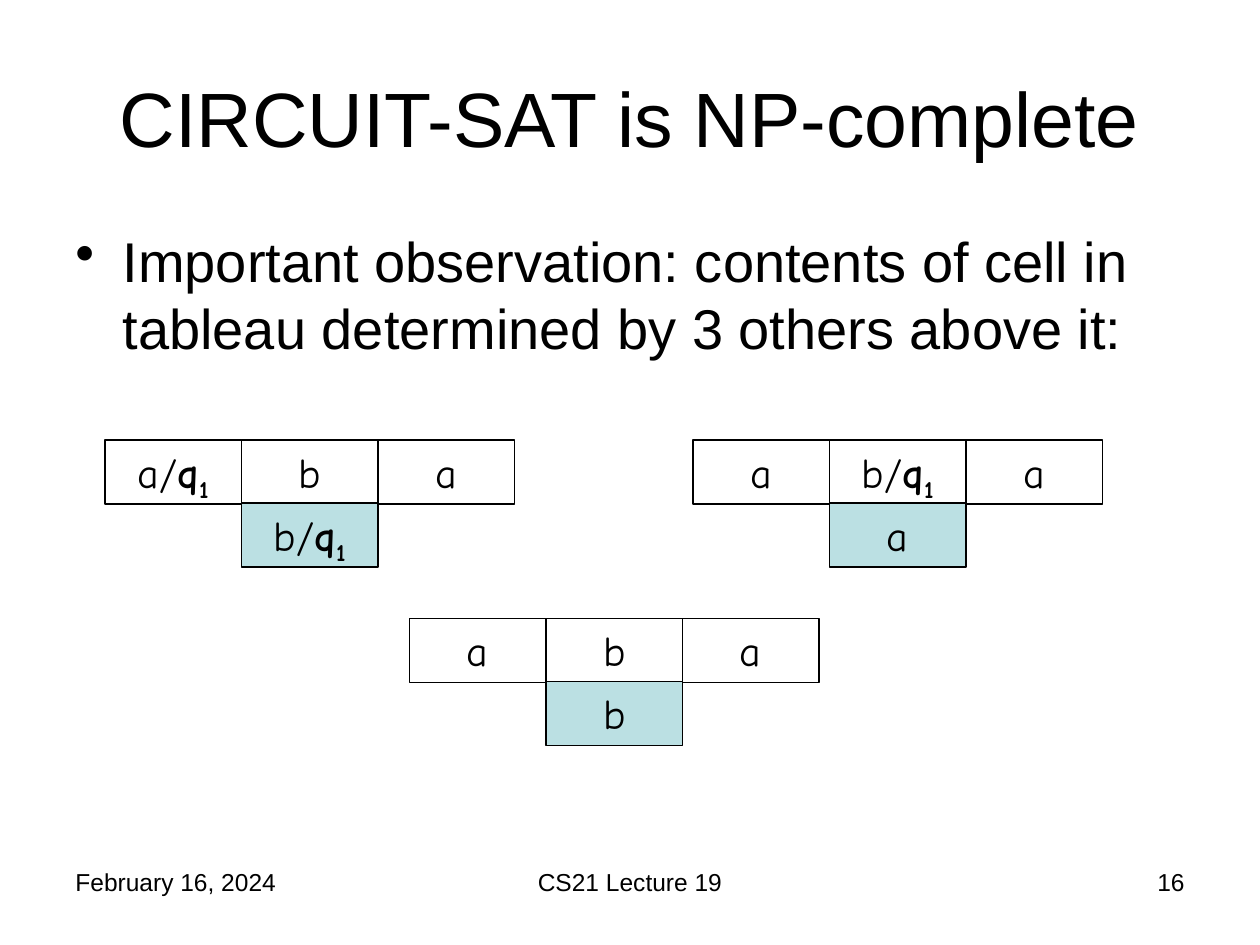
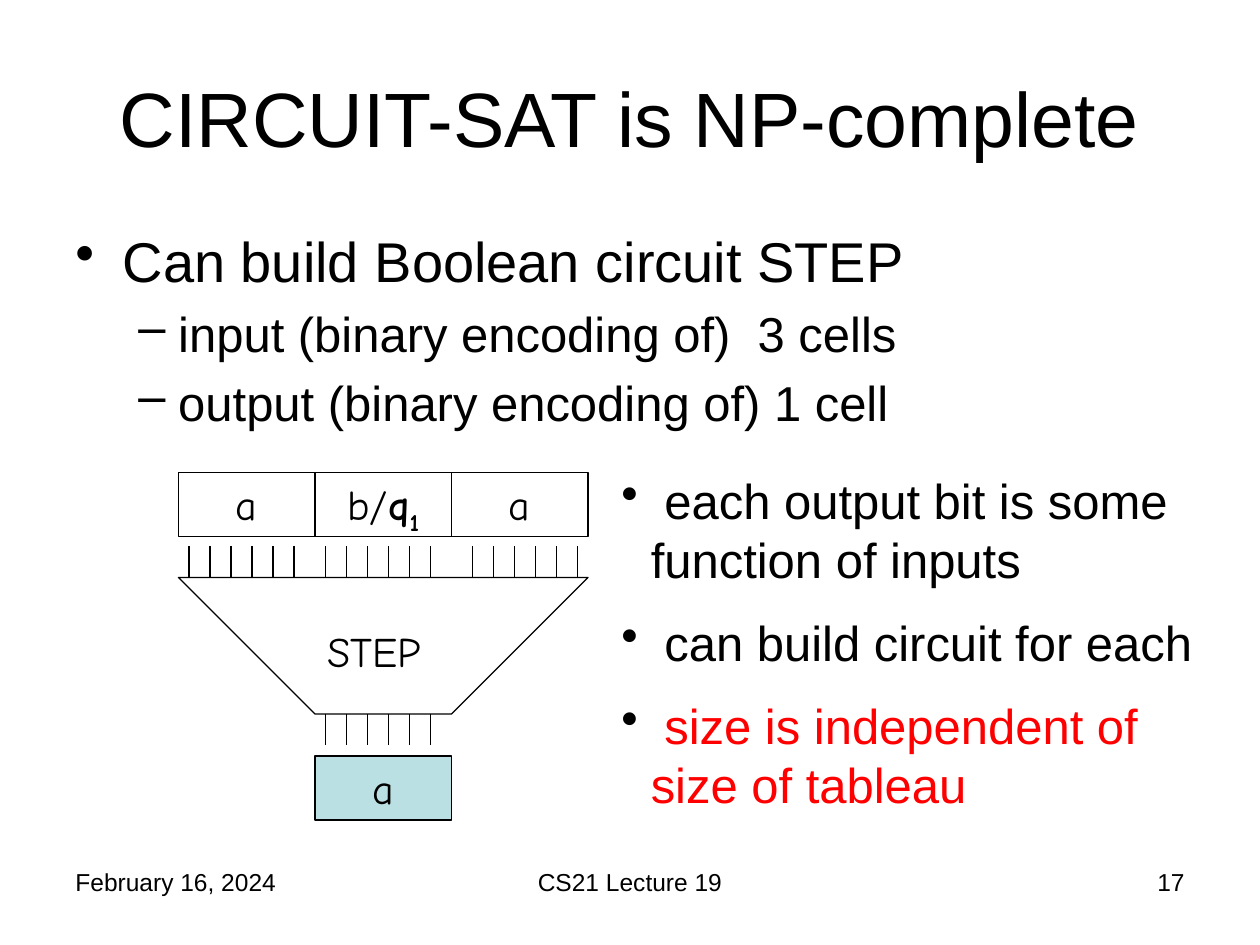
"""Build two lecture slides on the NP-completeness of CIRCUIT-SAT."""
from lxml import etree
from pptx import Presentation
from pptx.dml.color import RGBColor
from pptx.enum.shapes import MSO_CONNECTOR, MSO_SHAPE
from pptx.enum.text import MSO_ANCHOR, MSO_AUTO_SIZE, PP_ALIGN
from pptx.oxml.ns import qn
from pptx.util import Pt

PX = 7620
LINE, RECT = MSO_CONNECTOR.STRAIGHT, MSO_SHAPE.RECTANGLE
TOP, MIDDLE = MSO_ANCHOR.TOP, MSO_ANCHOR.MIDDLE
GROW = MSO_AUTO_SIZE.SHAPE_TO_FIT_TEXT
LEFT, CENTER, RIGHT = PP_ALIGN.LEFT, PP_ALIGN.CENTER, PP_ALIGN.RIGHT


class Theme:
    ink = RGBColor(0, 0, 0)
    red = RGBColor(255, 0, 0)
    teal = RGBColor(0xBB, 0xE0, 0xE3)
    sans, hand = "Arial", "Comic Neue"
    title, body, sub, cell, foot = Pt(44), Pt(32), Pt(28), Pt(24), Pt(14)
    rule = Pt(0.75)


def write(frame, text, size, face=Theme.sans, align=LEFT, gap=0, mark="", left=0, hang=0):
    """Add one paragraph, with gap in percent of the type size."""
    para = frame.add_paragraph() if frame.text else frame.paragraphs[0]
    para.add_run().text = text
    para.alignment = align
    para.font.size, para.font.name = size, face
    para.font.color.rgb = Theme.ink
    props = para._p.get_or_add_pPr()
    if mark:
        props.set("marL", str(left * PX))
        props.set("indent", str(-hang * PX))
        bullet = etree.Element(qn("a:buChar"))
        bullet.set("char", mark)
        props.insert(0, bullet)
    if gap:
        space = etree.Element(qn("a:spcBef"))
        etree.SubElement(space, qn("a:spcPct")).set("val", str(gap * 1000))
        props.insert(0, space)
    return para


def add_box(slide, x, y, w, h, anchor=TOP):
    """Add a wrapping text box and return its frame."""
    frame = slide.shapes.add_textbox(x * PX, y * PX, w * PX, h * PX).text_frame
    frame.word_wrap = True
    frame.vertical_anchor = anchor
    return frame


deck = Presentation()
deck.slide_width, deck.slide_height = 1200 * PX, 900 * PX

WIDE, TALL = 130, 61
bodies = [
    (150, [("Important observation: contents of cell in tableau determined by 3 others above it:", 0)]),
    (594, [("Can build Boolean circuit STEP", 0),
           ("input (binary encoding of)  3 cells", 1),
           ("output (binary encoding of) 1 cell", 1)]),
]
levels = [(Theme.body, "•", 45, 45), (Theme.sub, "–", 98, 38)]
tableaux = [
    [(100, 419, 479, ["a/q1", "b", "a"], "b/q1"),
     (660, 419, 479, ["a", "b/q1", "a"], "a"),
     (390, 589, 649, ["a", "b", "a"], "b")],
    [(170, 450, 720, ["a", "b/q1", "a"], "a")],
]

for number, ((depth, points), groups) in enumerate(zip(bodies, tableaux), 16):
    slide = deck.slides.add_slide(deck.slide_layouts[6])
    for x, w, text, align in [(60, 280, "February 16, 2024", LEFT),
                              (410, 380, "CS21 Lecture 19", CENTER),
                              (860, 280, str(number), RIGHT)]:
        write(add_box(slide, x, 820, w, 62), text, Theme.foot, align=align)
    write(add_box(slide, 60, 36, 1080, 150, MIDDLE), "CIRCUIT-SAT is NP-complete",
          Theme.title, align=CENTER)

    frame = add_box(slide, 60, 210, 1080, depth)
    for text, level in points:
        size, mark, left, hang = levels[level]
        write(frame, text, size, gap=20, mark=mark, left=left, hang=hang)

    for x, y, below, row, result in groups:
        cells = [(x + i * WIDE, y, label) for i, label in enumerate(row)]
        cells.append((x + WIDE, below, result))
        for i, (left, top, label) in enumerate(cells):
            cell = slide.shapes.add_shape(RECT, left * PX, top * PX, WIDE * PX, TALL * PX)
            cell.shadow.inherit = False
            cell.line.color.rgb, cell.line.width = Theme.ink, Theme.rule
            if i == len(row):
                cell.fill.solid()
                cell.fill.fore_color.rgb = Theme.teal
            else:
                cell.fill.background()
            frame = cell.text_frame
            frame.word_wrap, frame.auto_size, frame.vertical_anchor = True, GROW, TOP
            symbol, slash, state = label.partition("/")
            para = write(frame, symbol + slash, Theme.cell, Theme.hand, CENTER, gap=50)
            for char in state:
                run = para.add_run()
                run.text, run.font.bold = char, True
                if char.isdigit():
                    run._r.get_or_add_rPr().set("baseline", "-25000")

outline = slide.shapes.build_freeform(170, 550, scale=PX)
outline.add_line_segments([(300, 680), (430, 680), (560, 550)], close=True)
funnel = outline.convert_to_shape()
funnel.shadow.inherit = False
funnel.fill.background()
funnel.line.color.rgb, funnel.line.width = Theme.ink, Theme.rule

for start, top in [(180, 520), (310, 520), (450, 520), (310, 680)]:
    for x in range(start, start + 120, 20):
        wire = slide.shapes.add_connector(LINE, x * PX, top * PX, x * PX, (top + 30) * PX)
        wire.line.color.rgb, wire.line.width = Theme.ink, Theme.rule
        etree.SubElement(wire._element.spPr, qn("a:effectLst"))

frame = add_box(slide, 300, 590, 160, 60)
frame.auto_size = GROW
write(frame, "STEP", Theme.cell, Theme.hand, gap=50)

frame = add_box(slide, 580, 442, 590, 348)
frame.auto_size = GROW
for text in [" each output bit is some function of inputs", " can build circuit for each", " "]:
    para = write(frame, text, Theme.sub, gap=50, mark="•", left=28, hang=28)
run = para.add_run()
run.text = "size is independent of size of tableau"
run.font.color.rgb = Theme.red

deck.save("out.pptx")
